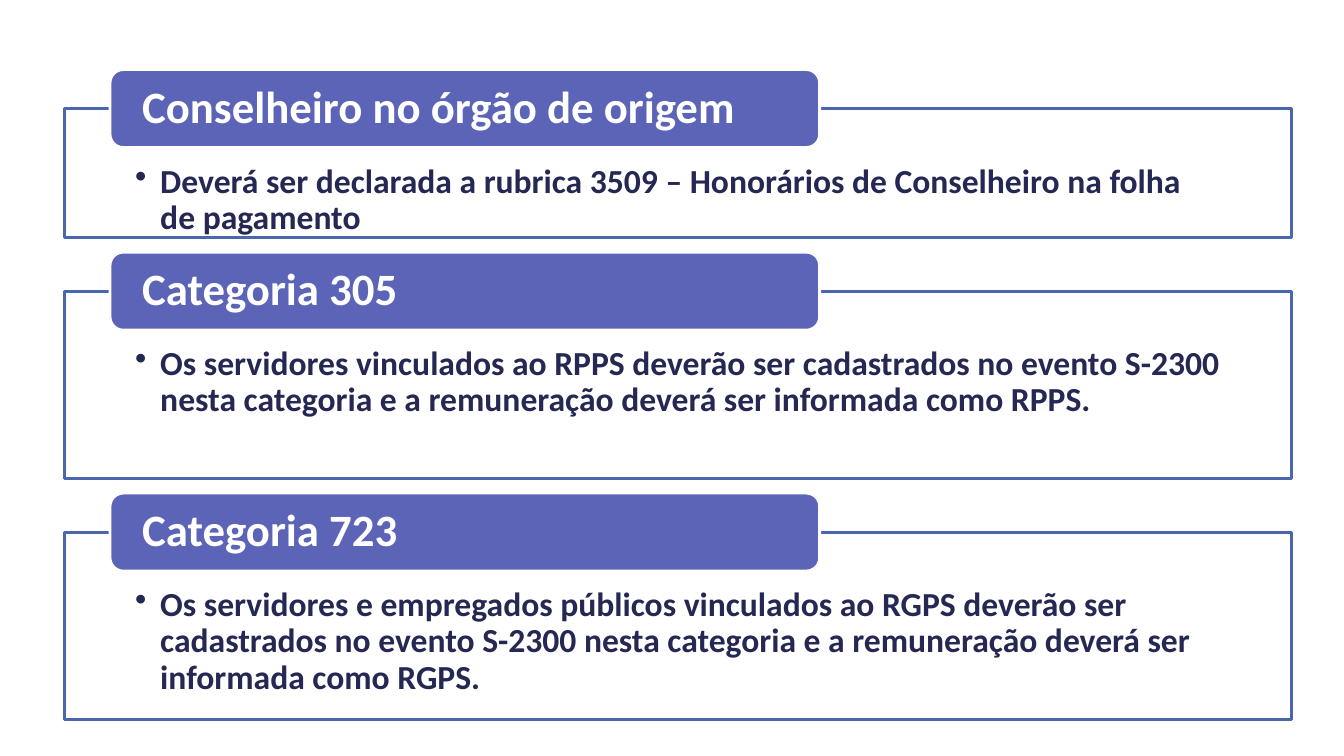
from dataclasses import dataclass
from typing import Any

from lxml import etree
from pptx import Presentation
from pptx.dml import color
from pptx.enum import shapes, text
from pptx.oxml import ns
from pptx.util import Pt


@dataclass(frozen=True)
class Theme:
    font: str = "Calibri"
    title_size: float = 32
    body_size: float = 24
    line_width: float = 2
    white: str = "FFFFFF"
    frame: str = "4A66AC"
    tab: str = "5C64B7"
    ink: str = "242852"


@dataclass(frozen=True)
class Section:
    title: str
    body: str
    height: float


@dataclass(frozen=True)
class Style:
    kind: shapes.MSO_SHAPE
    fill: str
    line: str
    ink: str
    size: float
    insets: tuple[float, float, float, float]
    anchor: text.MSO_ANCHOR


THEME = Theme()
PANEL = Style(shapes.MSO_SHAPE.RECTANGLE, THEME.white, THEME.frame, THEME.ink,
              THEME.body_size, (50.4, 39.6, 50.4, 11.5), text.MSO_ANCHOR.TOP)
TAB = Style(shapes.MSO_SHAPE.ROUNDED_RECTANGLE, THEME.tab, THEME.white, THEME.white,
            THEME.title_size, (20.2, 2.9, 20.2, 2.9), text.MSO_ANCHOR.MIDDLE)

PANEL_LEFT, PANEL_WIDTH = 46.1, 876.2
TAB_LEFT, TAB_WIDTH, TAB_HEIGHT = 78.6, 506.9, 55.7
FIRST_TOP, GAP, TAB_RISE = 77.6, 38.2, 27.9
INDENT = 18

SECTIONS = [
    Section("Conselheiro no órgão de origem",
            "Deverá ser declarada a rubrica 3509 – Honorários de Conselheiro "
            "na folha de pagamento", 92.2),
    Section("Categoria 305",
            "Os servidores vinculados ao RPPS deverão ser cadastrados no evento S-2300 "
            "nesta categoria e a remuneração deverá ser informada como RPPS.", 133.9),
    Section("Categoria 723",
            "Os servidores e empregados públicos vinculados ao RGPS deverão ser "
            "cadastrados no evento S-2300 nesta categoria e a remuneração deverá ser "
            "informada como RGPS.", 133.9),
]


def apply(target: Any, values: dict[str, Any]) -> None:
    for name, value in values.items():
        setattr(target, name, value)


def add_box(page: Any, style: Style, left: float, top: float,
            width: float, height: float, words: str) -> Any:
    box = page.shapes.add_shape(style.kind, Pt(left), Pt(top), Pt(width), Pt(height))
    box.shadow.inherit = False
    box.fill.solid()
    box.fill.fore_color.rgb = color.RGBColor.from_string(style.fill)
    box.line.color.rgb = color.RGBColor.from_string(style.line)
    box.line.width = Pt(THEME.line_width)
    sides = ("margin_left", "margin_top", "margin_right", "margin_bottom")
    apply(box.text_frame, dict(zip(sides, map(Pt, style.insets))))
    apply(box.text_frame, {"word_wrap": True, "vertical_anchor": style.anchor})
    para = box.text_frame.paragraphs[0]
    apply(para, {"alignment": text.PP_ALIGN.LEFT, "line_spacing": 0.9,
                 "space_before": Pt(0), "space_after": Pt(0)})
    span = para.add_run()
    span.text = words
    apply(span.font, {"name": THEME.font, "size": Pt(style.size), "bold": True})
    span.font.color.rgb = color.RGBColor.from_string(style.ink)
    return box


def add_bullet(para: Any) -> None:
    para.level = 1
    properties = para._p.get_or_add_pPr()
    properties.set("marL", str(Pt(INDENT)))
    properties.set("indent", str(-Pt(INDENT)))
    etree.SubElement(properties, ns.qn("a:buChar"), char="•")


def set_opacity(box: Any, percent: int) -> None:
    paint = box._element.spPr.find(ns.qn("a:solidFill"))[0]
    etree.SubElement(paint, ns.qn("a:alpha"), val=str(percent * 1000))


def add_section(page: Any, section: Section, top: float) -> None:
    panel = add_box(page, PANEL, PANEL_LEFT, top, PANEL_WIDTH, section.height, section.body)
    set_opacity(panel, 90)
    add_bullet(panel.text_frame.paragraphs[0])
    tab = add_box(page, TAB, TAB_LEFT, top - TAB_RISE, TAB_WIDTH, TAB_HEIGHT, section.title)
    tab.adjustments[0] = 0.17


def main() -> None:
    deck = Presentation()
    apply(deck, {"slide_width": Pt(960), "slide_height": Pt(540)})
    page = deck.slides.add_slide(deck.slide_layouts[6])
    top = FIRST_TOP
    for section in SECTIONS:
        add_section(page, section, top)
        top += section.height + GAP
    deck.save("out.pptx")


if __name__ == "__main__":
    main()
